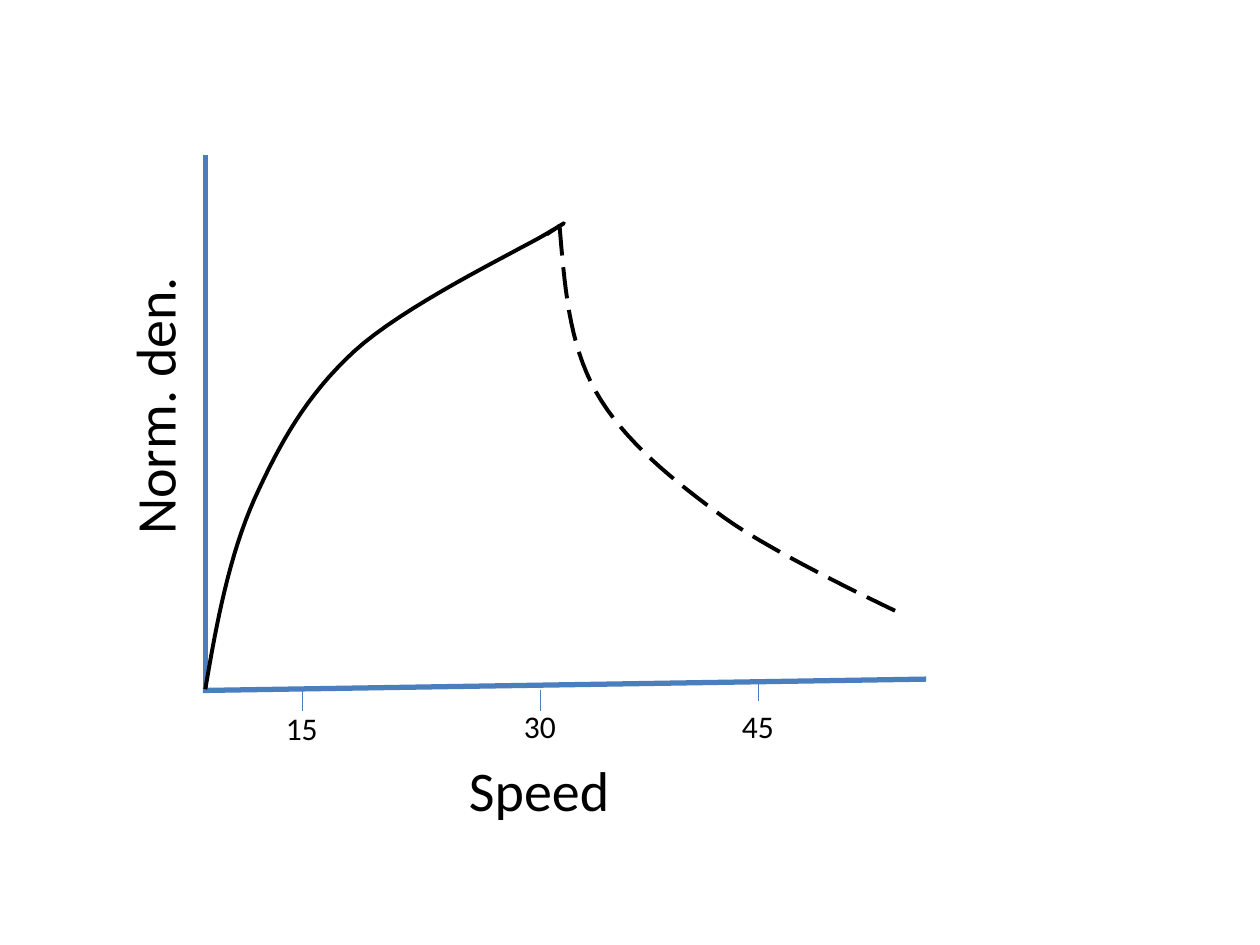
from collections import namedtuple

from lxml.etree import SubElement
from pptx import Presentation
from pptx.dml.color import RGBColor
from pptx.enum.dml import MSO_LINE
from pptx.enum.shapes import MSO_CONNECTOR
from pptx.enum.text import MSO_AUTO_SIZE, PP_ALIGN
from pptx.oxml.ns import qn
from pptx.util import Inches, Pt

AXIS_BLUE = RGBColor(0x4B, 0x7E, 0xBC)
BLACK = RGBColor(0x00, 0x00, 0x00)
FONT = "Calibri"
STEPS = 16  # straight pieces per Bezier segment

Box = namedtuple("Box", "left top width height")
PLOT = Box(1.63, 1.23, 5.72, 4.25)

# Bezier points in inches from the plot's top left corner:
# a start, then two control points and an end for each segment
RISING_CURVE = [
    (0, 4.24),
    (0.09, 3.71), (0.19, 3.18), (0.39, 2.73),
    (0.59, 2.29), (0.8, 1.91), (1.18, 1.56),
    (1.57, 1.2), (2.44, 0.78), (2.7, 0.63),
    (2.95, 0.48), (2.83, 0.55), (2.71, 0.63),
]
FALLING_CURVE = [
    (2.81, 0.55),
    (2.85, 1.02), (2.88, 1.49), (3.1, 1.88),
    (3.32, 2.27), (3.72, 2.59), (4.12, 2.88),
    (4.52, 3.17), (5.5, 3.63), (5.5, 3.63),
]

# Label, tick x, tick top and label top, from the same corner
TICKS = [
    ("15", 0.77, 4.25, 4.35),
    ("30", 2.66, 4.25, 4.33),
    ("45", 4.39, 4.17, 4.33),
]


def add_line(slide, start, end, width):
    line = slide.shapes.add_connector(
        MSO_CONNECTOR.STRAIGHT, *(Inches(value) for value in start + end))
    line.line.color.rgb = AXIS_BLUE
    line.line.width = Pt(width)
    SubElement(line._element.spPr, qn("a:effectLst"))


def add_label(slide, box, text, size, wrap=True, rotation=0):
    shape = slide.shapes.add_textbox(*(Inches(value) for value in box))
    shape.rotation = rotation
    frame = shape.text_frame
    frame.word_wrap = wrap
    frame.auto_size = MSO_AUTO_SIZE.SHAPE_TO_FIT_TEXT
    paragraph = frame.paragraphs[0]
    paragraph.alignment = PP_ALIGN.CENTER if wrap else PP_ALIGN.LEFT
    run = paragraph.add_run()
    run.text = text
    run.font.name = FONT
    run.font.size = Pt(size)
    run.font.color.rgb = BLACK


def bezier_points(points):
    """Sample a chain of cubic Bezier segments."""
    samples = [points[0]]
    for first in range(0, len(points) - 1, 3):
        corners = points[first:first + 4]
        for step in range(1, STEPS + 1):
            t = step / STEPS
            weights = ((1 - t) ** 3, 3 * t * (1 - t) ** 2,
                       3 * t ** 2 * (1 - t), t ** 3)
            samples.append(tuple(
                sum(weight * corner[axis]
                    for weight, corner in zip(weights, corners))
                for axis in (0, 1)))
    return samples


def add_curve(slide, box, points, dash=None):
    vertices = [(Inches(box.left + x), Inches(box.top + y))
                for x, y in bezier_points(points)]
    builder = slide.shapes.build_freeform(*vertices[0])
    builder.add_line_segments(vertices[1:], close=False)
    curve = builder.convert_to_shape()
    curve.shadow.inherit = False
    curve.fill.background()
    curve.line.color.rgb = BLACK
    curve.line.width = Pt(2.25)
    if dash:
        curve.line.dash_style = dash


def add_axes(slide, box):
    bottom = box.top + box.height
    add_line(slide, (box.left, box.top), (box.left, bottom), 3)
    # The speed axis rises slightly to the right
    add_line(slide, (box.left + box.width, bottom - 0.09),
             (box.left - 0.02, bottom), 3)


def add_axis_titles(slide, box):
    add_label(slide, Box(box.left + 0.22, box.top + 4.72, 4.96, 0.64),
              "Speed ", 32)
    add_label(slide, Box(box.left - 2.33, box.top + 1.62, 3.84, 0.64),
              "Norm. den. ", 32, rotation=270)


def add_ticks(slide, box):
    for text, x, tick_top, label_top in TICKS:
        left, top = box.left + x, box.top + tick_top
        add_line(slide, (left, top), (left, top + 0.16), 0.75)
        add_label(slide, Box(left - 0.23, box.top + label_top, 0.46, 0.4),
                  text, 18, wrap=False)


def main():
    presentation = Presentation()
    presentation.slide_width = Inches(10)
    presentation.slide_height = Inches(7.5)
    slide = presentation.slides.add_slide(presentation.slide_layouts[6])

    add_axes(slide, PLOT)
    add_curve(slide, PLOT, RISING_CURVE)
    add_curve(slide, PLOT, FALLING_CURVE, MSO_LINE.LONG_DASH)
    add_axis_titles(slide, PLOT)
    add_ticks(slide, PLOT)

    presentation.save("out.pptx")


if __name__ == "__main__":
    main()
